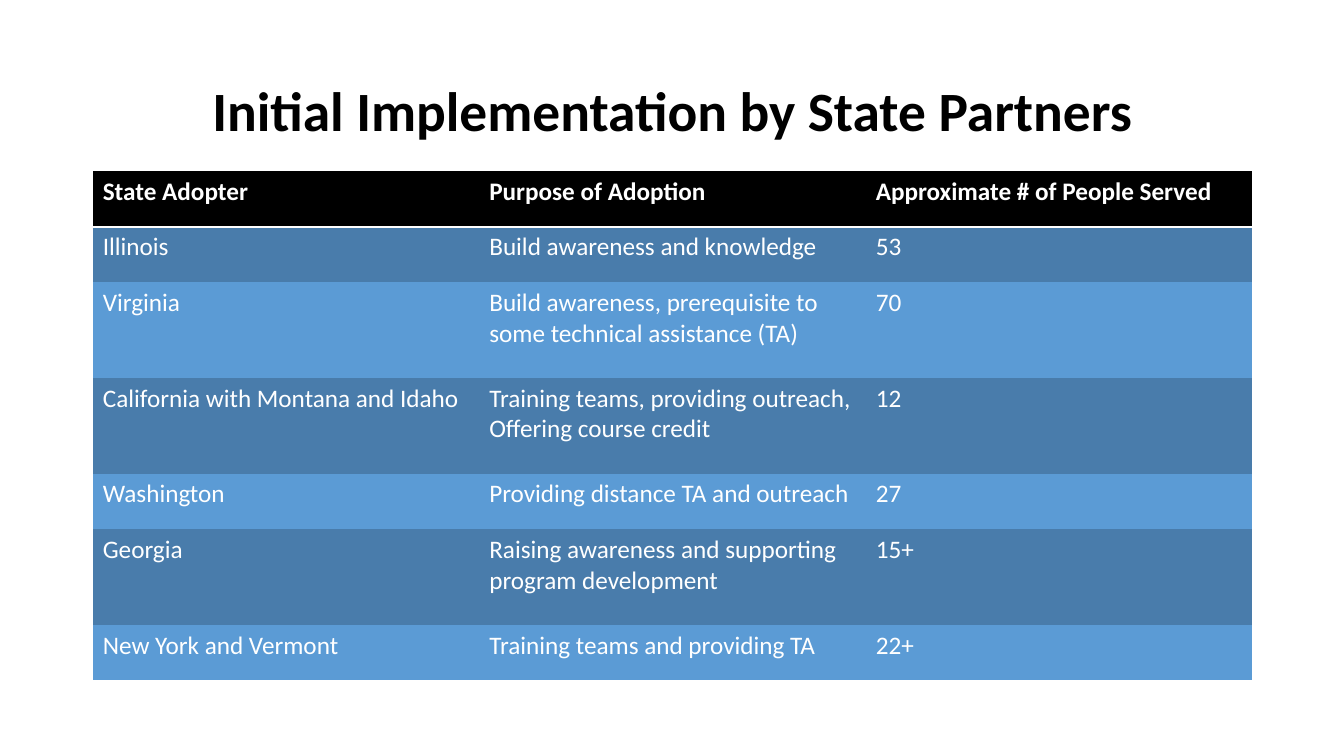
from lxml import etree
from pptx import Presentation, util as u
from pptx.dml.color import RGBColor
from pptx.enum import text
from pptx.oxml import ns

WIDE, HIGH = 13.33, 7.5
LEFT, SPAN = 0.92, 11.5
UNIT = 0.55
TALL = 0.95
PLAIN = "{2D5ABB26-0587-4C30-8999-92F81FD0307C}"
WHITE, BLACK = "FFFFFF", "000000"
BANDS = ["497CAB", "5B9BD5"]
HEADS = ["State Adopter", "Purpose of Adoption", "Approximate # of People Served"]
STATES = [
    (UNIT, "Illinois", "Build awareness and knowledge", "53"),
    (TALL, "Virginia", "Build awareness, prerequisite to some technical assistance (TA)", "70"),
    (TALL, "California with Montana and Idaho",
     "Training teams, providing outreach, Offering course credit", "12"),
    (UNIT, "Washington", "Providing distance TA and outreach", "27"),
    (TALL, "Georgia", "Raising awareness and supporting program development", "15+"),
    (UNIT, "New York and Vermont", "Training teams and providing TA", "22+"),
]


def paint(fill, hue):
    fill.solid()
    fill.fore_color.rgb = RGBColor.from_string(hue)


def write(para, words, size, hue, bold=False):
    run = para.add_run()
    run.text = words
    run.font.name = "Calibri"
    run.font.size = u.Pt(size)
    run.font.bold = bold
    paint(run.font.fill, hue)


def head(slide, words):
    title = slide.shapes.title
    title.left, title.top = u.Inches(LEFT), u.Inches(0.4)
    title.width, title.height = u.Inches(SPAN), u.Inches(1.45)
    frame = title.text_frame
    frame.word_wrap = True
    frame.auto_size = text.MSO_AUTO_SIZE.NONE
    frame.vertical_anchor = text.MSO_ANCHOR.MIDDLE
    para = frame.paragraphs[0]
    para.alignment = text.PP_ALIGN.CENTER
    para.line_spacing = 0.9
    write(para, words, 39.6, BLACK, True)


def rule(cell, hue, width):
    props = cell._tc.get_or_add_tcPr()
    line = etree.Element(ns.qn("a:lnB"), w=str(u.Pt(width)))
    fill = etree.SubElement(line, ns.qn("a:solidFill"))
    etree.SubElement(fill, ns.qn("a:srgbClr"), val=hue)
    props.insert(0, line)


def row(table, place, height, words, hue, bold=False):
    table.rows[place].height = u.Inches(height)
    for cell, word in zip(table.rows[place].cells, words):
        paint(cell.fill, hue)
        write(cell.text_frame.paragraphs[0], word, 18, WHITE, bold)


def grid(slide):
    total = UNIT + sum(state[0] for state in STATES)
    table = slide.shapes.add_table(
        len(STATES) + 1, len(HEADS), u.Inches(LEFT), u.Inches(1.7),
        u.Inches(SPAN), u.Inches(total)).table
    table._tbl.tblPr.find(ns.qn("a:tableStyleId")).text = PLAIN
    table.horz_banding = False
    row(table, 0, UNIT, HEADS, BLACK, True)
    for cell in table.rows[0].cells:
        rule(cell, WHITE, 2)
    for place, (height, *words) in enumerate(STATES, 1):
        row(table, place, height, words, BANDS[(place - 1) % 2])


def main():
    deck = Presentation()
    deck.slide_width, deck.slide_height = u.Inches(WIDE), u.Inches(HIGH)
    slide = deck.slides.add_slide(deck.slide_layouts[5])
    paint(slide.background.fill, WHITE)
    head(slide, "Initial Implementation by State Partners")
    grid(slide)
    deck.save("out.pptx")


if __name__ == "__main__":
    main()
